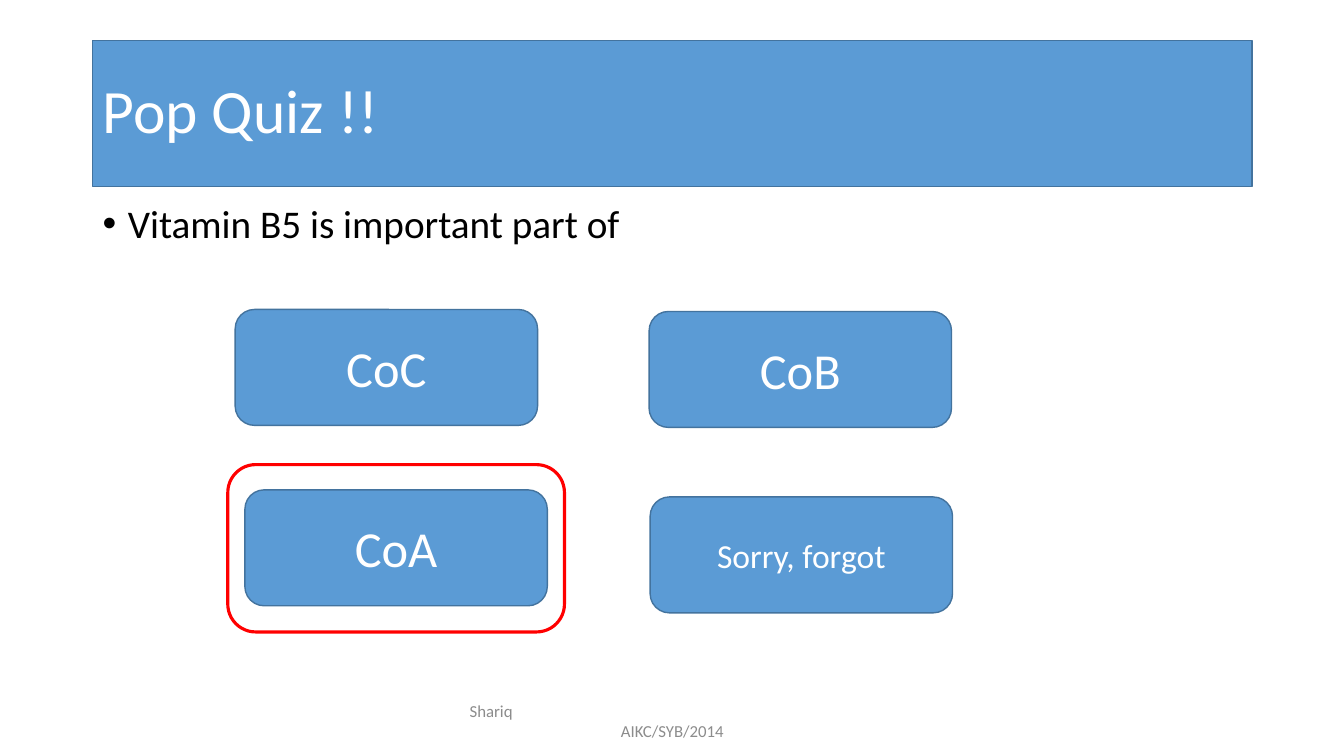
from pptx import Presentation
from pptx.dml.color import RGBColor
from pptx.enum.shapes import MSO_SHAPE
from pptx.enum.text import MSO_ANCHOR, PP_ALIGN
from pptx.util import Inches, Pt
from lxml.etree import SubElement
from pptx.oxml.ns import qn

COLORS = {"blue": "5B9BD5", "edge": "43739E", "ring": "FF0000",
          "white": "FFFFFF", "black": "000000", "gray": "8C8C8C"}

prs = Presentation()
prs.slide_width, prs.slide_height = Inches(13.333), Inches(7.5)
COL, ROW = prs.slide_width / 40, prs.slide_height / 30
s = prs.slides.add_slide(prs.slide_layouts[6])


def add_box(shape, x, y, w, h, fill=None, line=None, width=1):
    box = [round(v) for v in (x * COL, y * ROW, w * COL, h * ROW)]
    if shape is None:
        sp = s.shapes.add_textbox(*box)
    else:
        sp = s.shapes.add_shape(shape, *box)
        sp.shadow.inherit = False
        if fill:
            sp.fill.solid()
            sp.fill.fore_color.rgb = RGBColor.from_string(COLORS[fill])
        else:
            sp.fill.background()
        sp.line.color.rgb = RGBColor.from_string(COLORS[line])
        sp.line.width = Pt(width)
    sp.text_frame.word_wrap = True
    return sp


def set_text(sp, text, size, color, align=PP_ALIGN.LEFT, anchor=MSO_ANCHOR.MIDDLE):
    tf = sp.text_frame
    tf.text = text
    tf.vertical_anchor = anchor
    for p in tf.paragraphs:
        p.alignment = align
        for r in p.runs:
            r.font.name, r.font.size = "Calibri", Pt(size)
            r.font.color.rgb = RGBColor.from_string(COLORS[color])
    return tf.paragraphs[0]


question = add_box(None, 2.76, 7.92, 34.5, 3.16)
p = set_text(question, "Vitamin B5 is important part of", 28, "black", anchor=MSO_ANCHOR.TOP)
p.line_spacing, p.space_before = 0.9, Pt(10)
pPr = p._p.get_or_add_pPr()
pPr.set("marL", str(Inches(0.25)))
pPr.set("indent", str(-Inches(0.25)))
SubElement(pPr, qn("a:buFont")).set("typeface", "Arial")
SubElement(pPr, qn("a:buChar")).set("char", "•")

title = add_box(MSO_SHAPE.RECTANGLE, 2.76, 1.6, 34.5, 5.8, "blue", "edge")
set_text(title, "Pop Quiz !!", 44, "white").line_spacing = 0.9

footer = add_box(None, 13.26, 27.8, 13.5, 1.6)
p = set_text(footer, "Shariq\nAIKC/SYB/2014", 12, "gray", PP_ALIGN.CENTER)
p.alignment = PP_ALIGN.LEFT
p._p.get_or_add_pPr().set("marL", str(Inches(0.14)))

ANSWERS = [("CoC", 7, 12.28, 36), ("Sorry, forgot", 19.35, 19.72, 24),
           ("CoB", 19.32, 12.36, 36), ("CoA", 7.29, 19.44, 36)]
for text, x, y, size in ANSWERS:
    answer = add_box(MSO_SHAPE.ROUNDED_RECTANGLE, x, y, 9, 4.6, "blue", "edge")
    set_text(answer, text, size, "white", PP_ALIGN.CENTER)

add_box(MSO_SHAPE.ROUNDED_RECTANGLE, 6.78, 18.44, 10.02, 6.64, line="ring", width=2.25)

prs.save("out.pptx")
